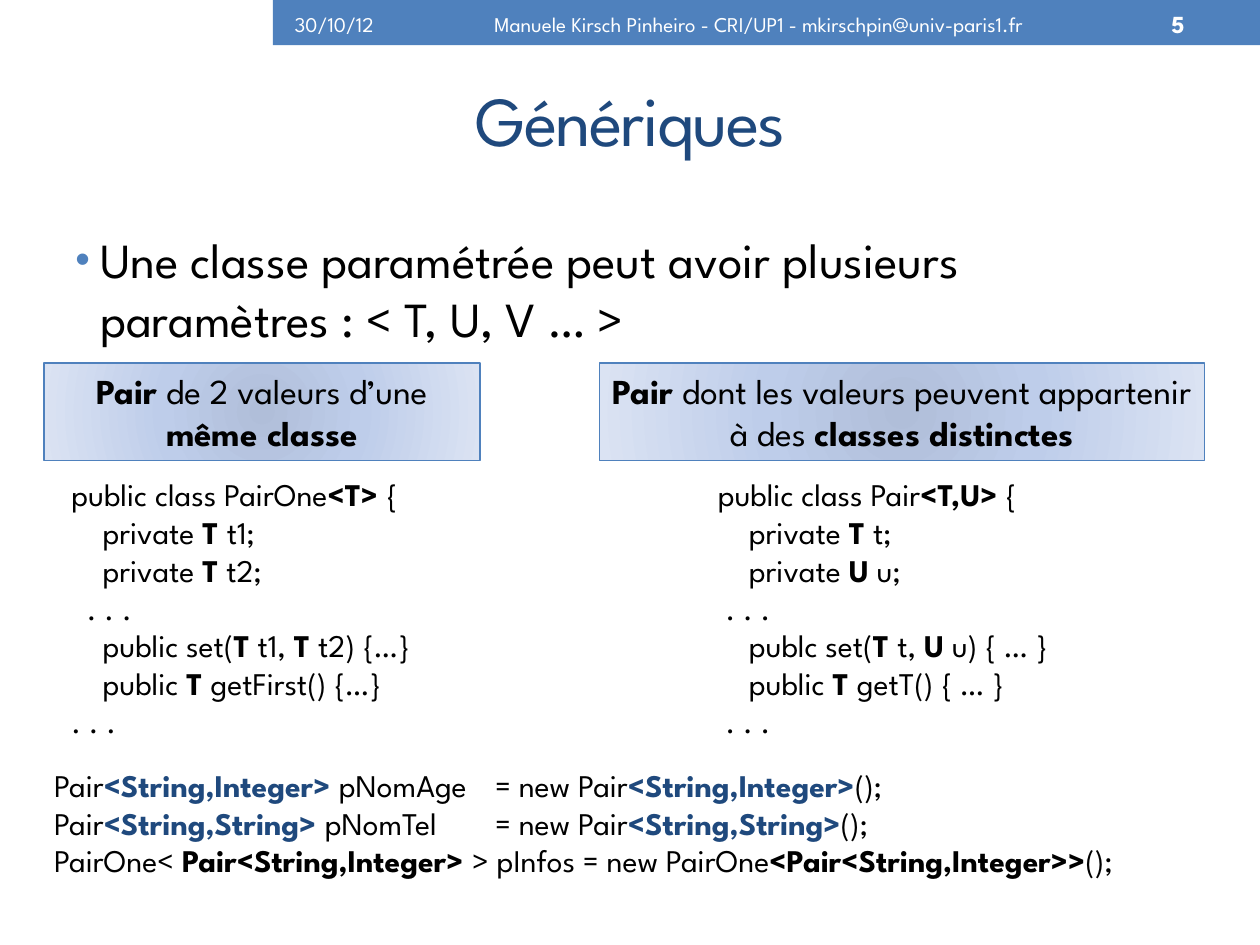
from lxml import etree
from pptx import Presentation
from pptx import util as u
from pptx.dml.color import RGBColor
from pptx.enum import shapes, text
from pptx.oxml import parse_xml
from pptx.oxml.ns import nsdecls, qn

FONT = "League Spartan"
COLORS = {
    "band": "4F81BD",
    "navy": "1F497D",
    "black": "000000",
    "white": "FFFFFF",
}
GLOW = {0: "B0BED9", 45: "BECDEA", 100: "DBE3F3"}
INSET = (0.25, 0.13)

LEFT, CENTER, RIGHT = text.PP_ALIGN.LEFT, text.PP_ALIGN.CENTER, text.PP_ALIGN.RIGHT
TOP, MIDDLE = text.MSO_ANCHOR.TOP, text.MSO_ANCHOR.MIDDLE

PAIR_ONE = [
    "public class PairOne*<T> *{",
    "    private *T *t1;",
    "    private *T* t2;",
    "  . . .",
    "    public set(*T* t1, *T *t2) {…}",
    "    public *T *getFirst() {…}",
    ". . .",
]
PAIR = [
    "public class Pair*<T,U>* {",
    "    private *T *t;",
    "    private *U* u;",
    " . . .",
    "    publc set(*T *t, *U* u) { … }",
    "    public *T *getT() { … }",
    " . . .",
]
INSTANCES = [
    ("Pair*<String,Integer> *pNomAge \t= new Pair*<String,Integer>*();", "navy"),
    ("Pair*<String,String> *pNomTel \t= new Pair*<String,String>*();", "navy"),
    ("PairOne< *Pair<String,Integer> *> pInfos = new PairOne*<Pair<String,Integer>>*();", "black"),
]


def rgb(name):
    return RGBColor.from_string(COLORS[name])


def write_line(paragraph, marked, size, color="black", strong=None, align=LEFT):
    paragraph.alignment = align
    for index, part in enumerate(marked.split("*")):
        if not part:
            continue
        bold = index % 2 == 1
        run = paragraph.add_run()
        run.text = part
        run.font.name = FONT
        run.font.size = u.Pt(size)
        run.font.bold = bold
        run.font.color.rgb = rgb(strong if bold and strong else color)


def set_frame(frame, inset=INSET, anchor=TOP):
    frame.word_wrap = True
    frame.vertical_anchor = anchor
    frame.margin_left = frame.margin_right = u.Cm(inset[0])
    frame.margin_top = frame.margin_bottom = u.Cm(inset[1])


def add_text(slide, area, lines, size, inset=INSET, anchor=TOP, **style):
    frame = slide.shapes.add_textbox(*map(u.Cm, area)).text_frame
    set_frame(frame, inset, anchor)
    for index, line in enumerate(lines):
        marked, strong = line if isinstance(line, tuple) else (line, None)
        paragraph = frame.add_paragraph() if index else frame.paragraphs[0]
        write_line(paragraph, marked, size, strong=strong, **style)
    return frame


def add_rect(slide, area):
    rect = slide.shapes.add_shape(shapes.MSO_SHAPE.RECTANGLE, *map(u.Cm, area))
    rect.shadow.inherit = False
    return rect


def add_header(slide):
    band = add_rect(slide, (5.5, 0, 19.9, 0.91))
    band.fill.solid()
    band.fill.fore_color.rgb = rgb("band")
    band.line.fill.background()
    for left, width, label, size, align in (
        (5.69, 2.79, "30/10/12", 12, LEFT),
        (8.1, 14.4, "Manuele Kirsch Pinheiro - CRI/UP1 - mkirschpin@univ-paris1.fr", 12, CENTER),
        (22.71, 1.42, "*5*", 14, RIGHT),
    ):
        add_text(slide, (left, 0.05, width, 0.86), [label], size,
                 anchor=MIDDLE, color="white", align=align)


def add_title(slide, title):
    frame = add_text(slide, (1.3, 1.12, 22.83, 2.54), [title], 40,
                     anchor=MIDDLE, color="navy", align=CENTER)
    frame.paragraphs[0].runs[0].font._element.set("spc", "-100")


def add_bullet(slide, sentence):
    frame = add_text(slide, (1.27, 4.5, 22.86, 2.7), [sentence], 28)
    props = frame.paragraphs[0]._p.get_or_add_pPr()
    props.set("marL", str(u.Cm(0.5)))
    props.set("indent", str(u.Cm(-0.5)))
    color = etree.SubElement(props, qn("a:buClr"))
    etree.SubElement(color, qn("a:srgbClr"), val=COLORS["band"])
    etree.SubElement(props, qn("a:buSzPct"), val="85000")
    etree.SubElement(props, qn("a:buFont"), typeface="Arial")
    etree.SubElement(props, qn("a:buChar"), char="•")


def add_caption(slide, left, width, caption, inset=INSET):
    box = add_rect(slide, (left, 7.32, width, 1.96))
    stops = "".join(
        f'<a:gs pos="{position * 1000}"><a:srgbClr val="{color}"/></a:gs>'
        for position, color in GLOW.items())
    glow = parse_xml(
        f'<a:gradFill {nsdecls("a")} rotWithShape="1"><a:gsLst>{stops}</a:gsLst>'
        '<a:path path="circle"><a:fillToRect l="100000" t="100000" r="100000" b="100000"/>'
        '</a:path></a:gradFill>')
    box._element.spPr.find(qn("a:prstGeom")).addnext(glow)
    box.line.color.rgb = rgb("band")
    box.line.width = u.Pt(0.75)
    set_frame(box.text_frame, inset)
    write_line(box.text_frame.paragraphs[0], caption, 20, align=CENTER)


def main():
    deck = Presentation()
    deck.slide_width, deck.slide_height = u.Cm(25.4), u.Cm(19.05)
    slide = deck.slides.add_slide(deck.slide_layouts[6])
    add_header(slide)
    add_title(slide, "Génériques")
    add_bullet(slide, "Une classe paramétrée peut avoir plusieurs paramètres : < T, U, V … >")
    add_text(slide, (14.22, 9.45, 8.48, 5.64), PAIR, 18)
    add_text(slide, (1.19, 9.45, 8.71, 5.64), PAIR_ONE, 18)
    add_caption(slide, 0.89, 8.79, "*Pair* de 2 valeurs d’une *même classe*")
    add_caption(slide, 12.09, 12.19,
                "*Pair* dont les valeurs peuvent appartenir à des *classes distinctes*",
                inset=(0.1, 0.13))
    add_text(slide, (1.09, 15.44, 23.9, 3.07), INSTANCES, 18, inset=(0, 0))
    deck.save("out.pptx")


if __name__ == "__main__":
    main()
